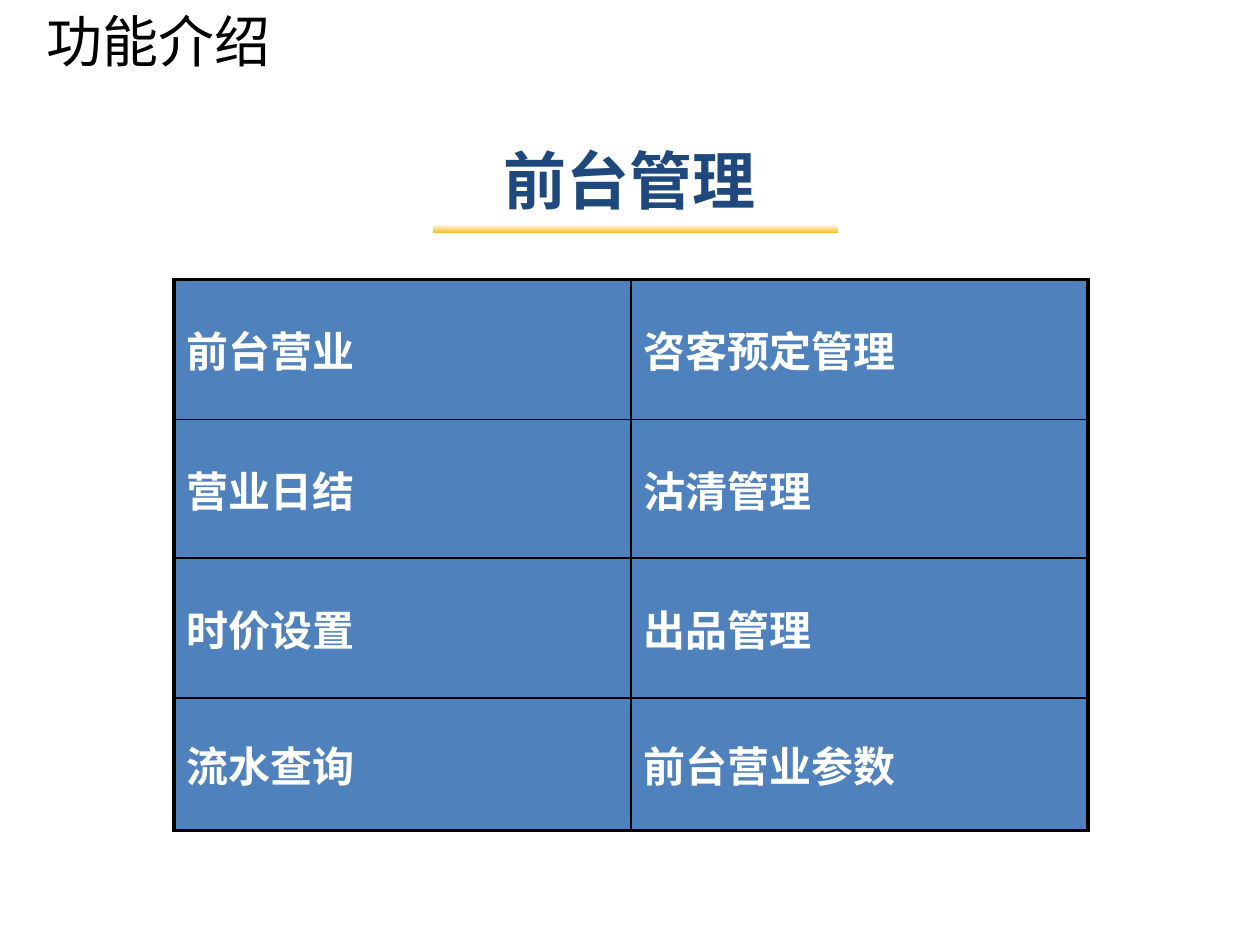
from dataclasses import dataclass

from lxml.etree import SubElement
from pptx import Presentation
from pptx.dml.color import RGBColor as Rgb
from pptx.enum.shapes import MSO_SHAPE as Shape
from pptx.enum.text import MSO_ANCHOR as Anchor, PP_ALIGN as Align
from pptx.oxml.ns import qn
from pptx.slide import Slide
from pptx.table import _Cell as Cell
from pptx.util import Cm, Pt

COLORS = {
    "black": "000000",
    "white": "FFFFFF",
    "navy": "1F497D",
    "blue": "4F81BD",
    "amber": "F9B407",
}
FUNCTIONS = [
    ("前台营业", "咨客预定管理"),
    ("营业日结", "沽清管理"),
    ("时价设置", "出品管理"),
    ("流水查询", "前台营业参数"),
]
ROW_HEIGHTS = [2.82, 2.79, 2.82, 2.67]
COLUMN_WIDTH = 9.21
OUTER_LINE, INNER_LINE = 2.25, 1


@dataclass
class Heading:
    text: str
    left: float
    top: float
    width: float
    height: float
    size: int
    color: str
    bold: bool = False
    align: Align = Align.LEFT
    anchor: Anchor = Anchor.TOP


HEADINGS = [
    Heading("功能介绍", 0.69, 0, 22.86, 1.73, 32, "black"),
    Heading("前台管理", 1.9, 2.29, 21.59, 2.64, 36, "navy", True, Align.CENTER, Anchor.MIDDLE),
]


def rgb(name: str) -> Rgb:
    return Rgb.from_string(COLORS[name])


def write_text(frame, text: str, color: str, align: Align = Align.LEFT, **font_format) -> None:
    para = frame.paragraphs[0]
    para.alignment = align
    span = para.add_run()
    span.text = text
    for name, value in font_format.items():
        setattr(span.font, name, value)
    span.font.color.rgb = rgb(color)


def add_heading(page: Slide, heading: Heading) -> None:
    box = page.shapes.add_textbox(
        Cm(heading.left), Cm(heading.top), Cm(heading.width), Cm(heading.height)
    )
    frame = box.text_frame
    frame.word_wrap = True
    frame.vertical_anchor = heading.anchor
    write_text(frame, heading.text, heading.color, heading.align,
               name="Calibri", size=Pt(heading.size), bold=heading.bold)


def set_borders(cell: Cell, widths: dict[str, float]) -> None:
    """Add the border lines; call before filling, as lines precede the fill in a cell."""
    properties = cell._tc.get_or_add_tcPr()
    for side, width in widths.items():
        line = SubElement(properties, qn(f"a:ln{side}"), w=str(Pt(width)))
        fill = SubElement(line, qn("a:solidFill"))
        SubElement(fill, qn("a:srgbClr"), val=COLORS["black"])


def add_function_table(page: Slide) -> None:
    row_count, column_count = len(FUNCTIONS), len(FUNCTIONS[0])
    table = page.shapes.add_table(
        row_count, column_count, Cm(3.51), Cm(5.64),
        Cm(COLUMN_WIDTH * column_count), Cm(sum(ROW_HEIGHTS)),
    ).table
    table.first_row = table.horz_banding = False
    for column in table.columns:
        column.width = Cm(COLUMN_WIDTH)
    for row, (height, names) in enumerate(zip(ROW_HEIGHTS, FUNCTIONS)):
        table.rows[row].height = Cm(height)
        for column, name in enumerate(names):
            cell = table.cell(row, column)
            on_edge = {
                "L": column == 0,
                "R": column == column_count - 1,
                "T": row == 0,
                "B": row == row_count - 1,
            }
            set_borders(cell, {side: OUTER_LINE if outer else INNER_LINE
                               for side, outer in on_edge.items()})
            cell.fill.solid()
            cell.fill.fore_color.rgb = rgb("blue")
            cell.vertical_anchor = Anchor.MIDDLE
            write_text(cell.text_frame, name, "white", name="Arial", size=Pt(24), bold=True)


def add_underline(page: Slide) -> None:
    bar = page.shapes.add_shape(Shape.RECTANGLE, Cm(8.71), Cm(4.52), Cm(8.2), Cm(0.2))
    bar.shadow.inherit = False
    bar.fill.gradient()
    bar.fill.gradient_angle = 270
    for stop, position, color in zip(bar.fill.gradient_stops, (0, 1), ("white", "amber")):
        stop.position = position
        stop.color.rgb = rgb(color)
    bar.line.color.rgb = rgb("white")
    bar.line.width = Pt(0.75)


def main() -> None:
    deck = Presentation()
    deck.slide_width, deck.slide_height = Cm(25.4), Cm(19.05)
    page = deck.slides.add_slide(deck.slide_layouts[6])
    add_function_table(page)
    for heading in HEADINGS:
        add_heading(page, heading)
    add_underline(page)
    deck.save("out.pptx")


if __name__ == "__main__":
    main()
